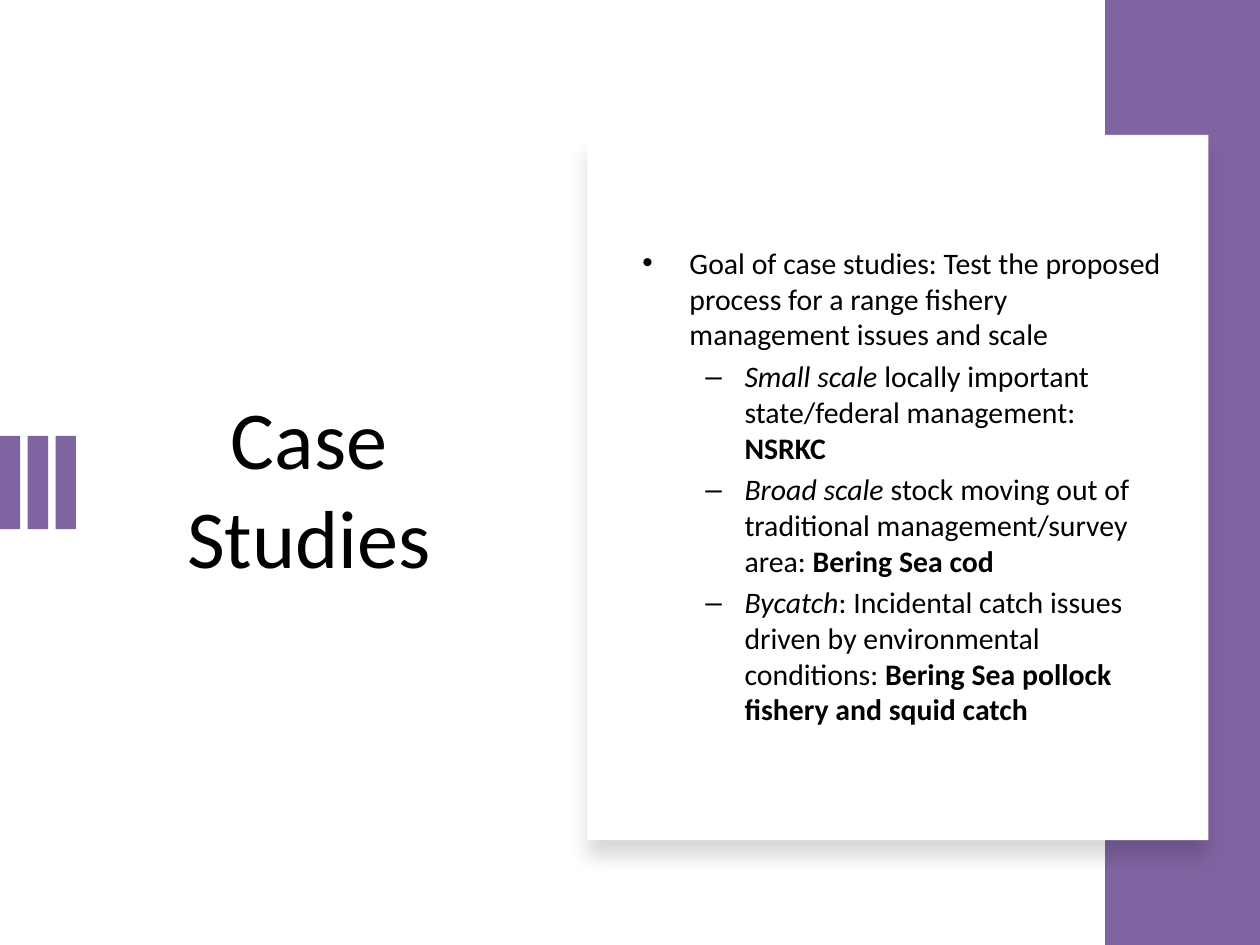
"""Build the Case Studies slide."""
from lxml import etree
from pptx import Presentation
from pptx.dml.color import RGBColor
from pptx.enum.shapes import MSO_SHAPE
from pptx.enum.text import MSO_ANCHOR, MSO_AUTO_SIZE, PP_ALIGN
from pptx.oxml.ns import qn
from pptx.util import Cm, Pt

RECTANGLE = MSO_SHAPE.RECTANGLE
MIDDLE = MSO_ANCHOR.MIDDLE
FIXED = MSO_AUTO_SIZE.NONE
CENTER, LEFT = PP_ALIGN.CENTER, PP_ALIGN.LEFT
PURPLE = RGBColor(0x80, 0x64, 0xA2)
WHITE = RGBColor(0xFF, 0xFF, 0xFF)
BLACK = RGBColor(0x00, 0x00, 0x00)
FONT = "Calibri"

TITLE = "Case Studies"
GOAL = "Goal of case studies: Test the proposed process for a range fishery management issues and scale"
CASES = [
    ("Small scale", " locally important state/federal management: ", "NSRKC"),
    ("Broad scale", " stock moving out of traditional management/survey area: ", "Bering Sea cod"),
    ("Bycatch", ": Incidental catch issues driven by environmental conditions: ",
     "Bering Sea pollock fishery and squid catch"),
]

PAGE_WIDTH, PAGE_HEIGHT = Cm(25.4), Cm(19.05)
TEXT_TOP, TEXT_HEIGHT = Cm(3.71), Cm(12.17)
BAND_LEFT = Cm(22.28)
BAR_COUNT, BAR_STEP = 3, Cm(0.56)
BAR_TOP, BAR_WIDTH, BAR_HEIGHT = Cm(8.79), Cm(0.41), Cm(1.88)


def add_block(shapes, left, top, width, height, color):
    block = shapes.add_shape(RECTANGLE, left, top, width, height)
    block.fill.solid()
    block.fill.fore_color.rgb = color
    block.line.fill.background()
    block.shadow.inherit = False
    return block


def add_shadow(shape, blur, distance, opacity):
    effects = shape._element.spPr.find(qn("a:effectLst"))
    shadow = etree.SubElement(effects, qn("a:outerShdw"), blurRad=str(blur), dist=str(distance),
                              dir="5400000", algn="t", rotWithShape="0")
    color = etree.SubElement(shadow, qn("a:srgbClr"), val=str(BLACK))
    etree.SubElement(color, qn("a:alpha"), val=str(opacity * 1000))


def set_bullet(para, mark, margin, hanging):
    properties = para._p.get_or_add_pPr()
    properties.set("marL", str(margin))
    properties.set("indent", str(-hanging))
    etree.SubElement(properties, qn("a:buFont"), typeface="Arial")
    etree.SubElement(properties, qn("a:buChar"), char=mark)


def add_span(para, text, size, bold=False, italic=False, align=LEFT):
    para.alignment = align
    span = para.add_run()
    span.text = text
    font = span.font
    font.name, font.size, font.bold, font.italic = FONT, Pt(size), bold, italic
    font.color.rgb = BLACK


def prepare_frame(box):
    frame = box.text_frame
    frame.word_wrap = True
    frame.auto_size = FIXED
    frame.vertical_anchor = MIDDLE
    return frame


def add_title(page):
    title = page.shapes.title
    title.left, title.top = Cm(2.18), TEXT_TOP
    title.width, title.height = Cm(8.1), TEXT_HEIGHT
    add_span(prepare_frame(title).paragraphs[0], TITLE, size=47, align=CENTER)


def add_body(page):
    box = page.shapes.add_textbox(Cm(12.7), TEXT_TOP, Cm(10.97), TEXT_HEIGHT)
    frame = prepare_frame(box)
    para = frame.paragraphs[0]
    set_bullet(para, "•", Cm(0.95), Cm(0.95))
    add_span(para, GOAL, size=17)
    for scale, issue, example in CASES:
        para = frame.add_paragraph()
        para.level = 1
        set_bullet(para, "–", Cm(2.06), Cm(0.79))
        para.space_before = Pt(3.4)
        add_span(para, scale, size=17, italic=True)
        add_span(para, issue, size=17)
        add_span(para, example, size=17, bold=True)


def main():
    deck = Presentation()
    deck.slide_width, deck.slide_height = PAGE_WIDTH, PAGE_HEIGHT
    page = deck.slides.add_slide(deck.slide_layouts[5])
    add_title(page)
    bars = page.shapes.add_group_shape()
    for index in range(BAR_COUNT):
        add_block(bars.shapes, index * BAR_STEP, BAR_TOP, BAR_WIDTH, BAR_HEIGHT, PURPLE)
    add_block(page.shapes, BAND_LEFT, 0, PAGE_WIDTH - BAND_LEFT, PAGE_HEIGHT, PURPLE)
    card = add_block(page.shapes, Cm(11.84), Cm(2.72), Cm(12.52), Cm(14.22), WHITE)
    add_shadow(card, blur=Pt(11), distance=Pt(10), opacity=15)
    add_body(page)
    deck.save("out.pptx")


if __name__ == "__main__":
    main()
